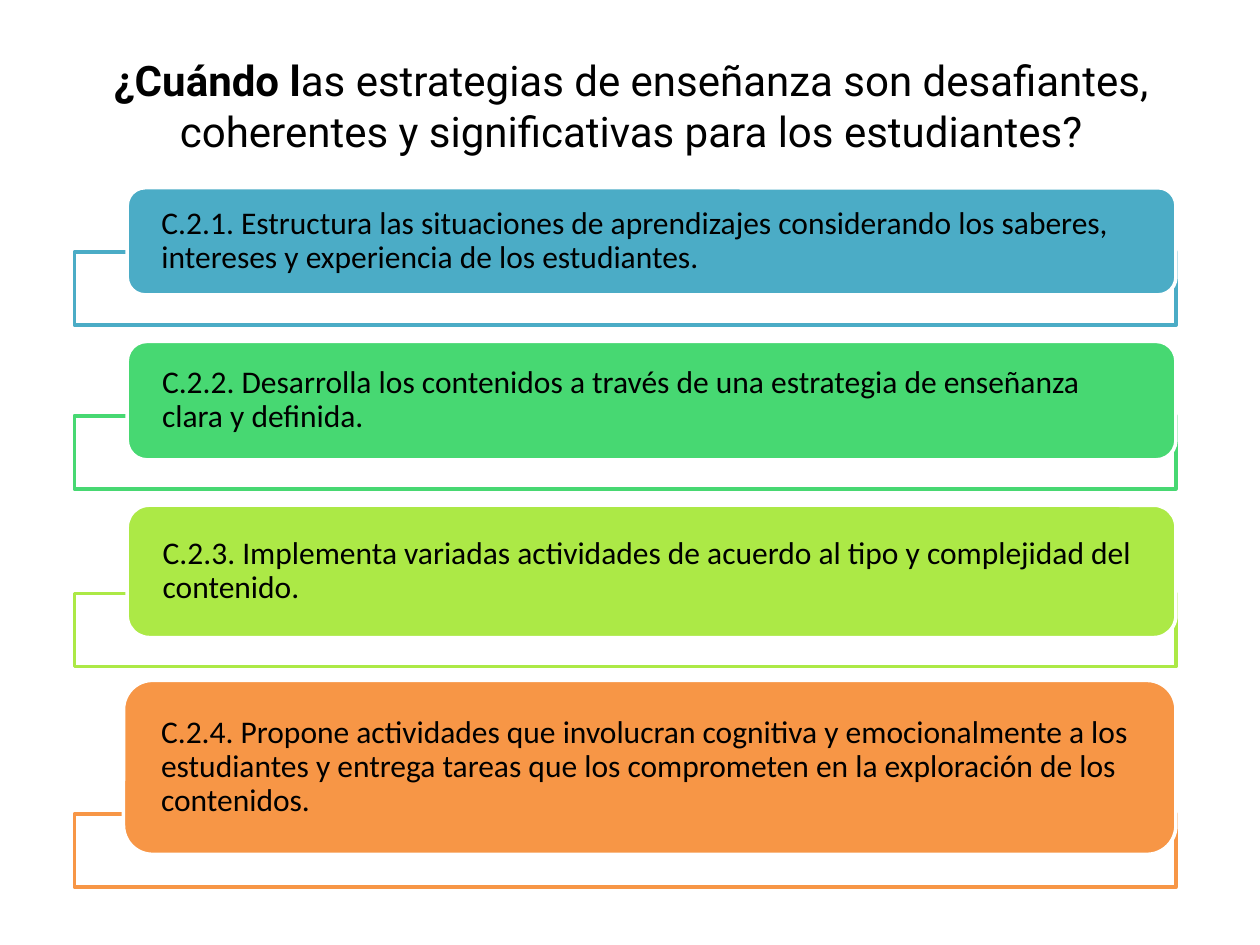
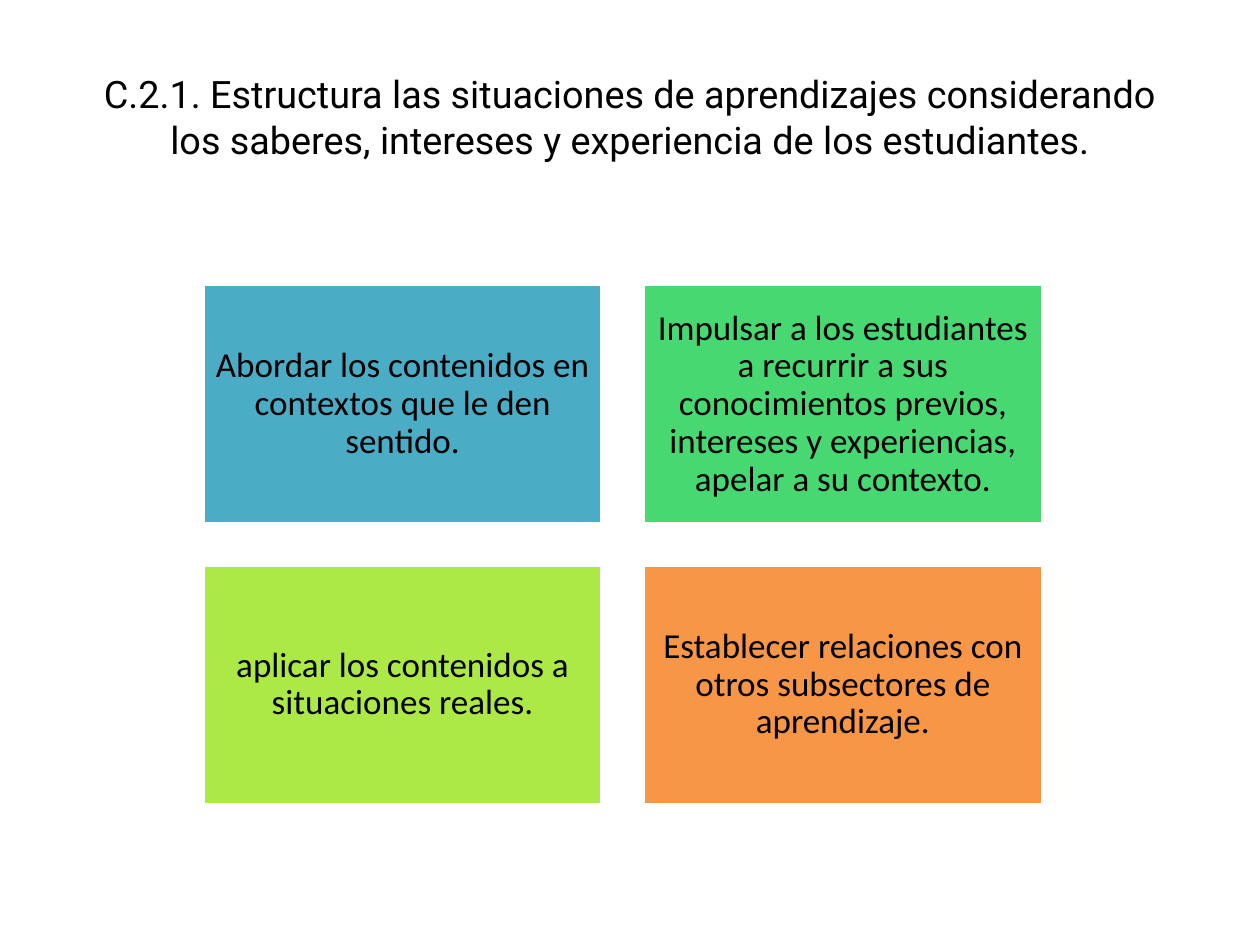
from pptx import Presentation
from pptx.dml.color import RGBColor
from pptx.enum.shapes import MSO_SHAPE
from pptx.enum.text import MSO_ANCHOR, MSO_AUTO_SIZE, PP_ALIGN
from pptx.util import Pt

RECT, ROUND = MSO_SHAPE.RECTANGLE, MSO_SHAPE.ROUNDED_RECTANGLE
MIDDLE, NO_FIT = MSO_ANCHOR.MIDDLE, MSO_AUTO_SIZE.NONE
LEFT, CENTER = PP_ALIGN.LEFT, PP_ALIGN.CENTER

COLORS = {"blue": "4BACC6", "green": "47D872", "lime": "ACE946",
          "orange": "F79646", "white": "FFFFFF", "black": "000000"}
HUES = ["blue", "green", "lime", "orange"]
TITLE_ONLY = 5
C21 = ("C.2.1. Estructura las situaciones de aprendizajes considerando "
       "los saberes, intereses y experiencia de los estudiantes.")

# Criteria: text, card left, card top, card height, frame top
CARDS = [
    (C21, 72.7, 107.3, 61.2, 144),
    ("C.2.2. Desarrolla los contenidos a través de una estrategia de "
     "enseñanza clara y definida.", 72.7, 195.1, 67.7, 237.6),
    ("C.2.3. Implementa variadas actividades de acuerdo al tipo y "
     "complejidad del contenido.", 72.7, 288.7, 75.6, 339.1),
    ("C.2.4. Propone actividades que involucran cognitiva y emocionalmente "
     "a los estudiantes y entrega tareas que los comprometen en la "
     "exploración de los contenidos.", 70.6, 388.8, 99.4, 465.1),
]
FRAME_LEFT, FRAME_HIGH, RIGHT = 42.5, 41.8, 672

TILES = [
    "Abordar los contenidos en contextos que le den sentido.",
    "Impulsar a los estudiantes a recurrir a sus conocimientos previos, "
    "intereses y experiencias, apelar a su contexto.",
    "aplicar los contenidos a situaciones reales.",
    "Establecer relaciones con otros subsectores de aprendizaje.",
]
GRID_LEFT, GRID_TOP = 116, 162.7
TILE_WIDE, TILE_HIGH, GAP = 228.2, 136.8, 23.4


def color(name):
    return RGBColor.from_string(COLORS[name])


def style(font, name, size):
    font.name = name
    font.size = Pt(size)
    font.color.rgb = color("black")


def add_slide(deck, parts, left, top, size):
    """Add a slide whose title is made of (text, bold) parts."""
    slide = deck.slides.add_slide(deck.slide_layouts[TITLE_ONLY])
    title = slide.shapes.title
    title.left, title.top = Pt(left), Pt(top)
    title.width, title.height = Pt(648), Pt(90)
    frame = title.text_frame
    frame.auto_size = NO_FIT
    frame.vertical_anchor = MIDDLE
    para = frame.paragraphs[0]
    para.alignment = CENTER
    style(para.font, "Roboto", size)
    for text, bold in parts:
        run = para.add_run()
        run.text = text
        run.font.bold = bold
    return slide


def add_box(slide, kind, left, top, wide, high, fill, line):
    box = slide.shapes.add_shape(kind, Pt(left), Pt(top), Pt(wide), Pt(high))
    box.shadow.inherit = False
    box.fill.solid()
    box.fill.fore_color.rgb = color(fill)
    box.line.color.rgb = color(line)
    box.line.width = Pt(2)
    return box


def set_text(box, text, size, align, side, edge):
    """Fill a box with text; side and edge are its insets."""
    frame = box.text_frame
    frame.word_wrap = True
    frame.vertical_anchor = MIDDLE
    frame.margin_left = frame.margin_right = Pt(side)
    frame.margin_top = frame.margin_bottom = Pt(edge)
    para = frame.paragraphs[0]
    para.text = text
    para.alignment = align
    para.line_spacing = 0.9
    style(para.font, "Calibri", size)


def add_card(slide, hue, text, left, top, high, base):
    add_box(slide, RECT, FRAME_LEFT, base, RIGHT - FRAME_LEFT, FRAME_HIGH,
            "white", hue)
    card = add_box(slide, ROUND, left, top, RIGHT - left, high, hue, "white")
    set_text(card, text, 18, LEFT, 16.6, 0)


def add_tile(slide, hue, text, spot):
    row, col = divmod(spot, 2)
    tile = add_box(slide, RECT, GRID_LEFT + col * (TILE_WIDE + GAP),
                   GRID_TOP + row * (TILE_HIGH + GAP),
                   TILE_WIDE, TILE_HIGH, hue, "white")
    set_text(tile, text, 20, CENTER, 6, 6)


def main():
    deck = Presentation()
    deck.slide_width, deck.slide_height = Pt(720), Pt(540)

    # Slide 1: the four criteria
    parts = [("¿Cuándo l", True),
             ("as estrategias de enseñanza son desafiantes, coherentes y "
              "significativas para los estudiantes?", False)]
    slide = add_slide(deck, parts, 36.7, 15.1, 24)
    for hue, card in zip(HUES, CARDS):
        add_card(slide, hue, *card)

    # Slide 2: the first criterion in a two by two grid
    slide = add_slide(deck, [(C21, False)], 36, 21.6, 21.6)
    for spot, (hue, text) in enumerate(zip(HUES, TILES)):
        add_tile(slide, hue, text, spot)

    deck.save("out.pptx")


if __name__ == "__main__":
    main()
